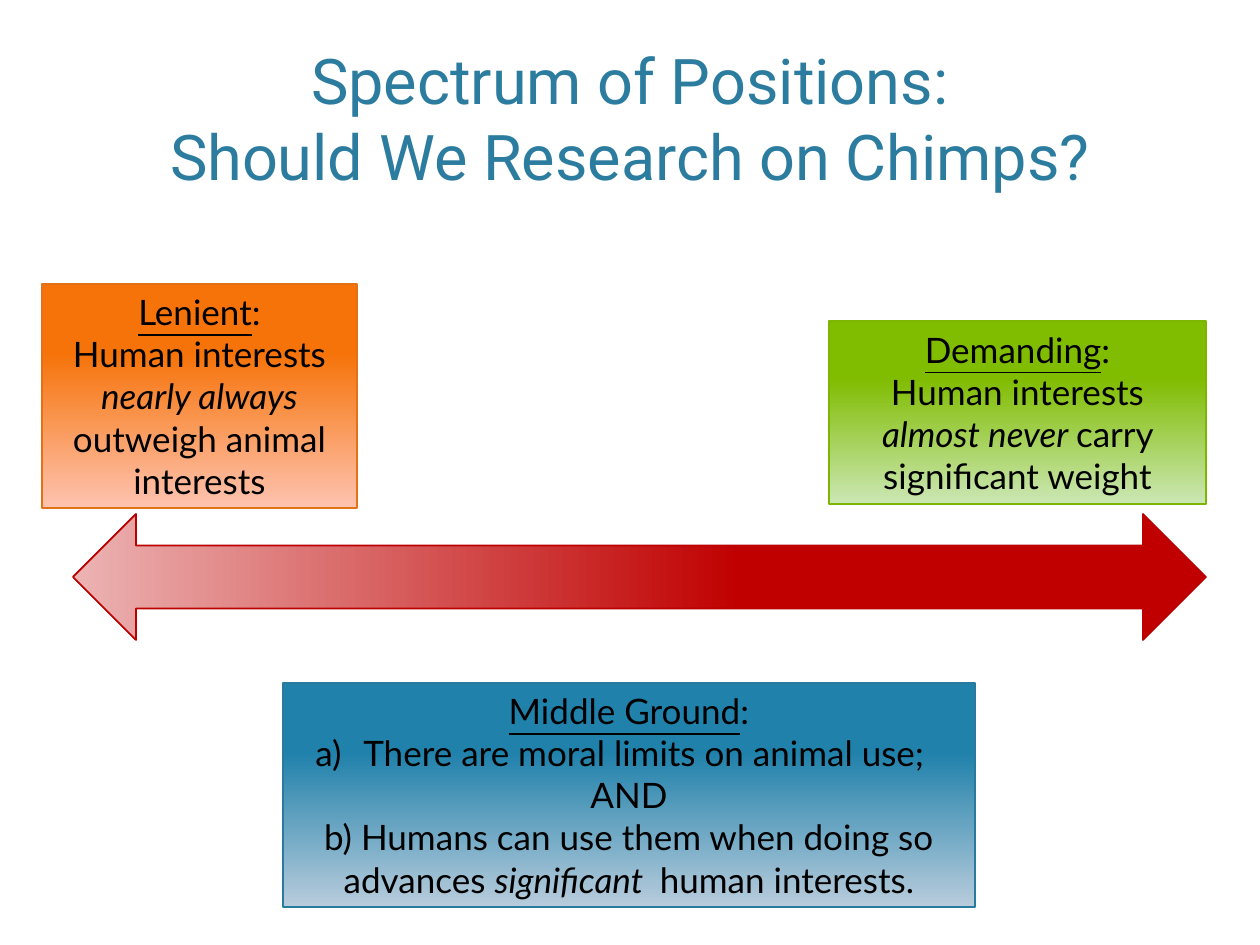
from dataclasses import dataclass

from lxml.etree import SubElement
from pptx import Presentation
from pptx.dml.color import RGBColor
from pptx.enum.shapes import MSO_SHAPE as Shape
from pptx.enum.text import MSO_ANCHOR as Anchor, MSO_AUTO_SIZE as AutoSize, PP_ALIGN as Align
from pptx.oxml.ns import qn
from pptx.util import Emu, Pt


@dataclass(frozen=True)
class Theme:
    title_font: str = "Roboto"
    body_font: str = "Lato"
    title_size: int = 36
    body_size: int = 20
    title_color: str = "2C7C9F"
    body_color: str = "000000"
    line_width: int = 1


THEME = Theme()
PX = 914400 / 126
HANGING_INDENT = 48

TITLE = "Spectrum of Positions:\vShould We Research on Chimps?"
TITLE_AT = (0, 15, 1260, 184)

SPECTRUM = {
    "at": (73, 514, 1133, 126),
    "stops": [(0.41, "C00000"), (1, "ECB3B3")],
    "angle": 180,
    "line": "BC0000",
}

POSITIONS = [
    {
        "name": "Lenient",
        "at": (42, 284, 315, 224),
        "stops": [(0.31, "F67309"), (1, "FEC3B0")],
        "line": "E27218",
        "claims": [
            {"runs": ["Human interests ", ("nearly always ",), "outweigh animal interests"]},
        ],
    },
    {
        "name": "Demanding",
        "at": (829, 321, 377, 183),
        "stops": [(0.31, "80BC00"), (1, "CBE7B4")],
        "line": "7DB602",
        "claims": [
            {"runs": ["Human interests ", ("almost never ",), "carry significant weight"]},
        ],
    },
    {
        "name": "Middle Ground",
        "at": (283, 683, 692, 224),
        "stops": [(0.31, "2081AB"), (1, "B8CCDC")],
        "line": "287A9E",
        "claims": [
            {"runs": ["There are moral limits on animal use;  "], "hanging": True, "lettered": True},
            {"runs": ["AND"], "hanging": True},
            {"runs": ["b) Humans can use them when doing so advances ",
                      ("significant  ",), "human interests."]},
        ],
    },
]


def to_emu(lengths):
    return [Emu(round(length * PX)) for length in lengths]


def style_font(font, name, size, color):
    font.name = name
    font.size = Pt(size)
    font.color.rgb = RGBColor.from_string(color)


def add_gradient_shape(slide, preset, at, stops, angle, line):
    shape = slide.shapes.add_shape(preset, *to_emu(at))
    shape.shadow.inherit = False
    shape.fill.gradient()
    shape.fill.gradient_angle = angle
    for stop, (position, color) in zip(shape.fill.gradient_stops, stops):
        stop.position = position
        stop.color.rgb = RGBColor.from_string(color)
    shape.line.color.rgb = RGBColor.from_string(line)
    shape.line.width = Pt(THEME.line_width)
    return shape


def add_run(paragraph, text, italic=False, underline=False):
    run = paragraph.add_run()
    run.text = text
    style_font(run.font, THEME.body_font, THEME.body_size, THEME.body_color)
    run.font.italic = italic
    run.font.underline = underline


def add_claim(frame, claim):
    paragraph = frame.add_paragraph()
    paragraph.alignment = Align.CENTER
    for part in claim["runs"]:
        italic = isinstance(part, tuple)
        add_run(paragraph, part[0] if italic else part, italic=italic)
    properties = paragraph._p.get_or_add_pPr()
    if claim.get("hanging"):
        indent = round(HANGING_INDENT * PX)
        properties.set("marL", str(indent))
        properties.set("indent", str(-indent))
    if claim.get("lettered"):
        SubElement(properties, qn("a:buFont"), typeface=THEME.body_font)
        SubElement(properties, qn("a:buAutoNum"), type="alphaLcParenR")


def add_position(slide, position):
    box = add_gradient_shape(slide, Shape.RECTANGLE, position["at"],
                             position["stops"], 270, position["line"])
    frame = box.text_frame
    frame.word_wrap = True
    frame.auto_size = AutoSize.SHAPE_TO_FIT_TEXT
    heading = frame.paragraphs[0]
    heading.alignment = Align.CENTER
    add_run(heading, position["name"], underline=True)
    add_run(heading, ":")
    for claim in position["claims"]:
        add_claim(frame, claim)


def add_title(slide):
    title = slide.shapes.title
    title.left, title.top, title.width, title.height = to_emu(TITLE_AT)
    frame = title.text_frame
    frame.text = TITLE
    frame.auto_size = AutoSize.NONE
    frame.vertical_anchor = Anchor.BOTTOM
    paragraph = frame.paragraphs[0]
    paragraph.alignment = Align.CENTER
    for run in paragraph.runs:
        style_font(run.font, THEME.title_font, THEME.title_size, THEME.title_color)


def main():
    deck = Presentation()
    deck.slide_width, deck.slide_height = to_emu((1260, 945))
    slide = deck.slides.add_slide(deck.slide_layouts[5])
    add_title(slide)
    add_gradient_shape(slide, Shape.LEFT_RIGHT_ARROW, **SPECTRUM)
    for position in POSITIONS:
        add_position(slide, position)
    deck.save("out.pptx")


if __name__ == "__main__":
    main()
